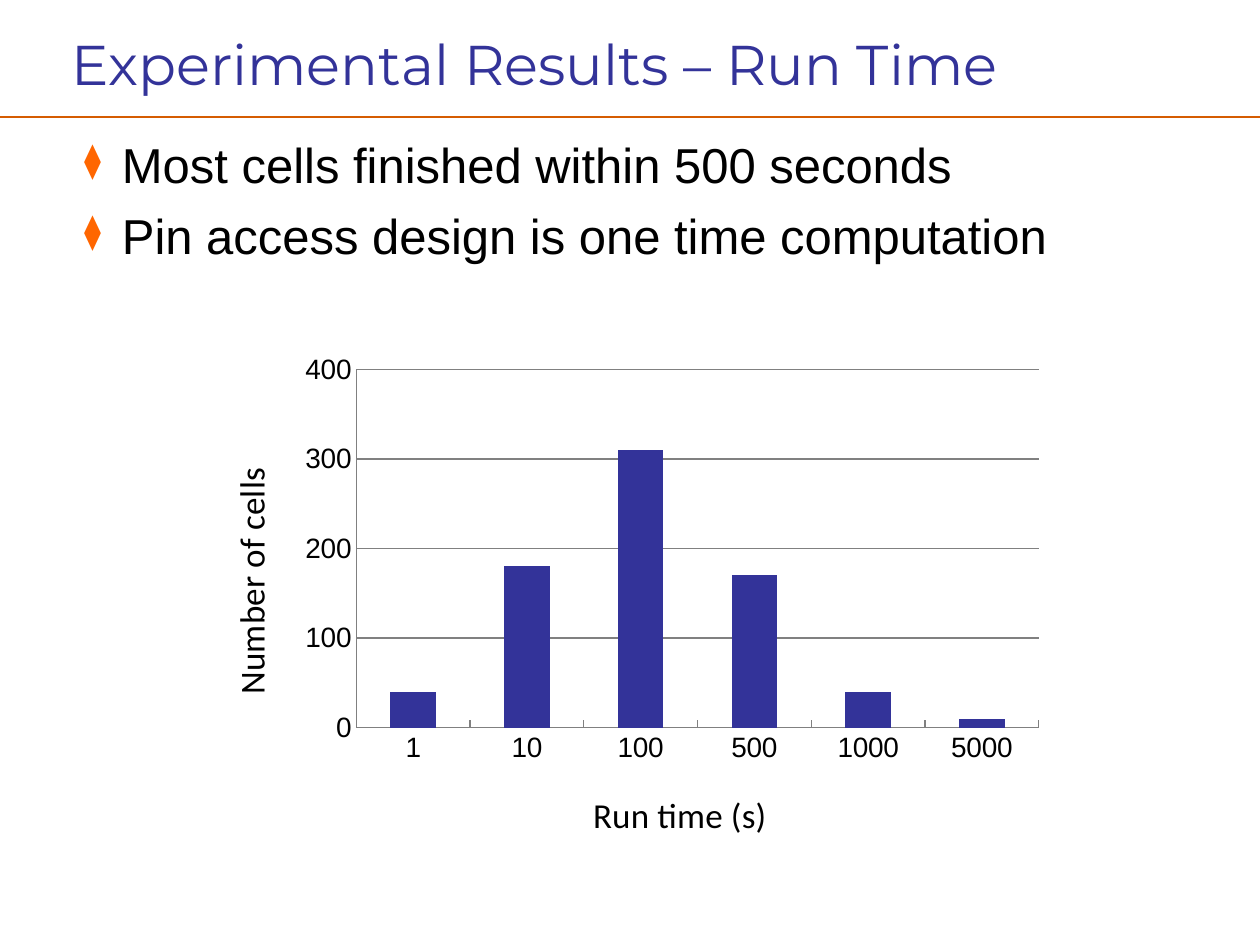
from lxml import etree
from pptx import Presentation
from pptx.chart.data import CategoryChartData
from pptx.dml.color import RGBColor
from pptx.enum.chart import XL_CHART_TYPE, XL_TICK_MARK
from pptx.enum.shapes import MSO_CONNECTOR
from pptx.enum.text import MSO_ANCHOR, PP_ALIGN
from pptx.oxml.ns import qn
from pptx.util import Inches, Pt

COLUMN = XL_CHART_TYPE.COLUMN_CLUSTERED
TICK_IN = XL_TICK_MARK.INSIDE
STRAIGHT = MSO_CONNECTOR.STRAIGHT
MIDDLE = MSO_ANCHOR.MIDDLE
LEFT = PP_ALIGN.LEFT

NAVY = RGBColor(0x33, 0x33, 0x99)
RUST = RGBColor(0xD5, 0x5C, 0x01)
ORANGE = RGBColor(0xFF, 0x66, 0x00)
BLACK = RGBColor(0, 0, 0)
GREY = RGBColor(0x80, 0x80, 0x80)

W, H = 10, 7.5
TITLE_BOX = (0.47, 0.11, 9.05, 0.78)
RULE_Y = 0.93
BODY_BOX = (0.44, 1.02, 9.16, 5.84)
CHART_BOX = (1.61, 2.73, 6.77, 4.06)

BULLETS = ["Most cells finished within 500 seconds",
           "Pin access design is one time computation"]
RUN_TIMES = ["1", "10", "100", "500", "1000", "5000"]
CELL_COUNTS = [40, 180, 310, 170, 40, 10]


def inches(box):
    return [Inches(v) for v in box]


def style(font, name, size, color):
    font.name, font.size = name, Pt(size)
    font.color.rgb = color


def add_title(s, box, text):
    sp = s.shapes.title
    sp.left, sp.top, sp.width, sp.height = inches(box)
    tf = sp.text_frame
    tf.word_wrap = True
    tf.vertical_anchor = MIDDLE
    p = tf.paragraphs[0]
    p.alignment = LEFT
    r = p.add_run()
    r.text = text
    style(r.font, "Montserrat", 32, NAVY)


def add_rule(s, y):
    line = s.shapes.add_connector(STRAIGHT, *inches((0, y, W, y)))
    line.line.color.rgb = RUST
    line.line.width = Pt(1)
    etree.SubElement(line._element.spPr, qn("a:effectLst"))


def add_bullet(p):
    pPr = p._p.get_or_add_pPr()
    pPr.set("marL", str(Inches(0.43)))
    pPr.set("indent", str(Inches(-0.3)))
    color = etree.SubElement(pPr, qn("a:buClr"))
    etree.SubElement(color, qn("a:srgbClr"), val=str(ORANGE))
    etree.SubElement(pPr, qn("a:buSzPct"), val="70000")
    etree.SubElement(pPr, qn("a:buChar"), char="⧫")


def add_body(s, box, lines):
    tf = s.shapes.add_textbox(*inches(box)).text_frame
    tf.word_wrap = True
    for i, text in enumerate(lines):
        p = tf.add_paragraph() if i else tf.paragraphs[0]
        add_bullet(p)
        if i:
            p.space_before = Pt(7)
        r = p.add_run()
        r.text = text
        style(r.font, "Arial", 28, BLACK)


def set_layout(parent, index, **shares):
    for old in parent.findall(qn("c:layout")):
        parent.remove(old)
    layout = etree.Element(qn("c:layout"))
    manual = etree.SubElement(layout, qn("c:manualLayout"))
    if "w" in shares:
        etree.SubElement(manual, qn("c:layoutTarget"), val="inner")
    for axis in "xy":
        etree.SubElement(manual, qn(f"c:{axis}Mode"), val="edge")
    for key, share in shares.items():
        etree.SubElement(manual, qn(f"c:{key}"), val=str(share))
    parent.insert(index, layout)


def format_axis(axis, title, x, y):
    axis.major_tick_mark = TICK_IN
    axis.format.line.color.rgb = GREY
    style(axis.tick_labels.font, "Arial", 16, BLACK)
    p = axis.axis_title.text_frame.paragraphs[0]
    r = p.add_run()
    r.text = title
    style(r.font, "Calibri", 20, BLACK)
    r.font.bold = False
    set_layout(axis.axis_title._element, 1, x=x, y=y)


def add_histogram(s, box):
    data = CategoryChartData()
    data.categories = RUN_TIMES
    data.add_series("Series 1", CELL_COUNTS)
    chart = s.shapes.add_chart(COLUMN, *inches(box), data).chart
    style(chart.font, "Arial", 18, BLACK)
    chart.has_legend = False
    chart.has_title = False
    plot = chart.plots[0]
    plot.gap_width = 150
    plot.vary_by_categories = False
    fill = plot.series[0].format.fill
    fill.solid()
    fill.fore_color.rgb = NAVY
    format_axis(chart.category_axis, "Run time (s)", 0.45, 0.86)
    axis = chart.value_axis
    format_axis(axis, "Number of cells", 0.02, 0.23)
    axis.minimum_scale, axis.maximum_scale, axis.major_unit = 0, 400, 100
    axis.has_major_gridlines = True
    axis.major_gridlines.format.line.color.rgb = GREY
    plot_area = chart._chartSpace.find(".//" + qn("c:plotArea"))
    set_layout(plot_area, 0, x=0.18, y=0.05, w=0.8, h=0.7)


def main():
    prs = Presentation()
    prs.slide_width, prs.slide_height = Inches(W), Inches(H)
    s = prs.slides.add_slide(prs.slide_layouts[5])
    add_rule(s, RULE_Y)
    add_title(s, TITLE_BOX, "Experimental Results – Run Time")
    add_body(s, BODY_BOX, BULLETS)
    add_histogram(s, CHART_BOX)
    prs.save("out.pptx")


if __name__ == "__main__":
    main()
